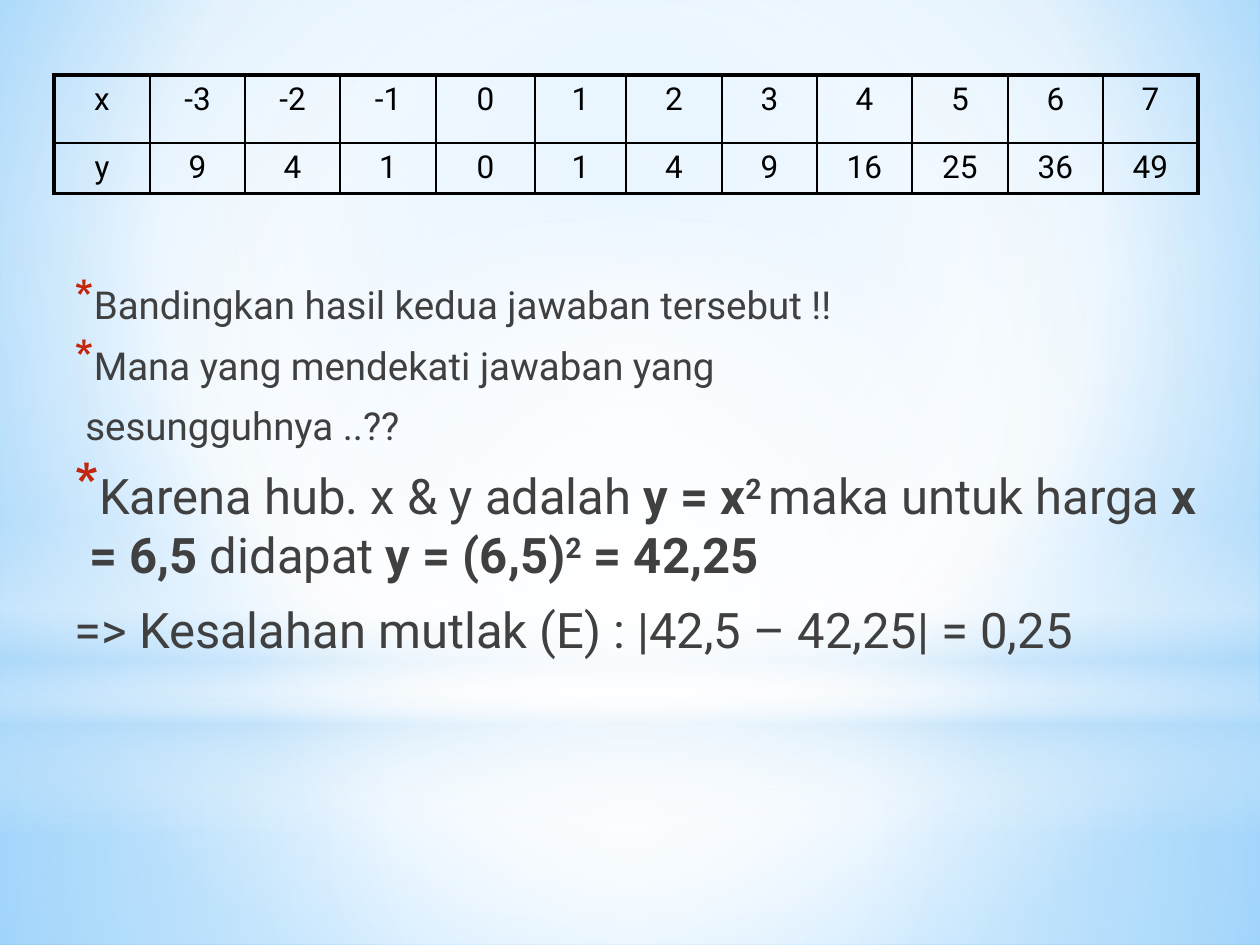
from lxml.etree import Element, SubElement
from pptx import Presentation
from pptx.dml.color import RGBColor
from pptx.enum.shapes import MSO_SHAPE
from pptx.enum.text import PP_ALIGN
from pptx.oxml.ns import qn
from pptx.util import Emu, Pt

THEME = {
    "font": "Roboto", "body": "404040", "black": "000000", "bullet": "C3260C",
    "white": "FFFFFF", "haze": "B4DCFA", "sky": "9ED5FF", "deep": "5BB9FF",
    "small": 22, "large": 28, "cell": 18, "thin": 1, "thick": 2.25,
}
SLIDE = (1260, 945)
CENTRE = (50, 50, 50, 50)
BACKDROP = {"stops": [(0, "sky", 100), (60, "white", 100), (100, "deep", 100)],
            "focus": (20, 10, 20, 60)}
LAYERS = [
    {"shape": MSO_SHAPE.RECTANGLE, "box": (0, 703, 1260, 242), "focus": CENTRE,
     "stops": [(0, "white", 91), (37, "white", 76), (100, "haze", 79)]},
    {"shape": MSO_SHAPE.RECTANGLE, "box": (0, 0, 1260, 703), "focus": CENTRE,
     "stops": [(0, "white", 89), (48, "white", 62), (100, "haze", 79)]},
    {"shape": MSO_SHAPE.RECTANGLE, "box": (0, 519, 1260, 315), "focus": None,
     "stops": [(0, "white", 0), (29, "white", 30), (45, "haze", 40),
               (55, "white", 26), (65, "haze", 60), (100, "white", 0)]},
    {"shape": MSO_SHAPE.OVAL, "box": (0, 220, 1260, 703), "focus": CENTRE,
     "stops": [(0, "white", 100), (56, "white", 0)]},
]

X_VALUES = range(-3, 8)
TABLE_ROWS = [["x", *X_VALUES], ["y", *(x * x for x in X_VALUES)]]
TABLE_AT = (54, 75)
COLUMN_WIDTHS = [96, 95, 95, 96, 99, 91, 96, 95, 95, 96, 95, 95]
ROW_HEIGHTS = [68, 50]

BODY_BOX = (54, 275, 1166, 514)
MARGIN, HANGING, CONTINUED = 23, -15, -4
PARAGRAPHS = [
    ("small", True, HANGING, [("Bandingkan hasil kedua jawaban tersebut !!", "")]),
    ("small", True, HANGING, [("Mana yang mendekati jawaban yang", "")]),
    ("small", False, CONTINUED, [("sesungguhnya ..??", "")]),
    ("large", True, HANGING, [
        ("Karena hub. x & y adalah ", ""), ("y = x", "bold"), ("2 ", "bold super"),
        ("maka untuk harga ", ""), ("x = 6,5 ", "bold"), ("didapat ", ""),
        ("y = (6,5)", "bold"), ("2", "bold super"), (" = 42,25", "bold")]),
    ("large", False, HANGING,
     [("=> Kesalahan mutlak (E) : |42,5 – 42,25| = 0,25", "")]),
]
SPACE_BEFORE = {"small": 5.2, "large": 6.6}


def px(value):
    return Emu(round(value * 914400 / 126))


def apply(target, values):
    for name, value in values.items():
        setattr(target, name, value)


def style(font, size, color, bold=False):
    apply(font, {"name": THEME["font"], "size": Pt(THEME[size]), "bold": bold})
    font.color.rgb = RGBColor.from_string(THEME[color])


def fill_gradient(fill, owner, stops, focus):
    fill.solid()
    solid = owner.find(".//" + qn("a:solidFill"))
    gradient = Element(qn("a:gradFill"), rotWithShape="1")
    stop_list = SubElement(gradient, qn("a:gsLst"))
    for position, color, opacity in stops:
        stop = SubElement(stop_list, qn("a:gs"), pos=str(position * 1000))
        tone = SubElement(stop, qn("a:srgbClr"), val=THEME[color])
        if opacity < 100:
            SubElement(tone, qn("a:alpha"), val=str(opacity * 1000))
    if focus:
        route = SubElement(gradient, qn("a:path"), {"path": "circle"})
        sides = {side: str(share * 1000) for side, share in zip("ltrb", focus)}
        SubElement(route, qn("a:fillToRect"), sides)
    else:
        SubElement(gradient, qn("a:lin"), ang=str(90 * 60000), scaled="0")
    solid.getparent().replace(solid, gradient)


def add_layer(page, layer):
    shape = page.shapes.add_shape(layer["shape"], *map(px, layer["box"]))
    shape.shadow.inherit = False
    shape.line.fill.background()
    fill_gradient(shape.fill, shape._element, layer["stops"], layer["focus"])


def set_borders(cell, widths):
    properties = cell._tc.get_or_add_tcPr()
    for side, width in zip("LRTB", widths):
        line = SubElement(properties, qn("a:ln" + side), w=str(Pt(THEME[width])))
        paint = SubElement(line, qn("a:solidFill"))
        SubElement(paint, qn("a:srgbClr"), val=THEME["black"])


def add_values(page):
    last_row, last_column = len(TABLE_ROWS) - 1, len(COLUMN_WIDTHS) - 1
    size = (sum(COLUMN_WIDTHS), sum(ROW_HEIGHTS))
    table = page.shapes.add_table(last_row + 1, last_column + 1,
                                  *map(px, TABLE_AT + size)).table
    apply(table, {"first_row": False, "horz_banding": False})
    for column, width in zip(table.columns, COLUMN_WIDTHS):
        column.width = px(width)
    for r, values in enumerate(TABLE_ROWS):
        table.rows[r].height = px(ROW_HEIGHTS[r])
        for c, value in enumerate(values):
            cell = table.cell(r, c)
            outer = (c == 0, c == last_column, r == 0, r == last_row)
            set_borders(cell, ["thick" if edge else "thin" for edge in outer])
            cell.fill.background()
            para = cell.text_frame.paragraphs[0]
            para.alignment = PP_ALIGN.CENTER
            span = para.add_run()
            span.text = str(value)
            style(span.font, "cell", "black")


def set_bullet(para, bulleted, indent):
    properties = para._p.get_or_add_pPr()
    properties.set("marL", str(px(MARGIN)))
    properties.set("indent", str(px(indent)))
    if bulleted:
        tone = SubElement(properties, qn("a:buClr"))
        SubElement(tone, qn("a:srgbClr"), val=THEME["bullet"])
        SubElement(properties, qn("a:buSzPct"), val="130000")
        SubElement(properties, qn("a:buChar"), char="*")
    else:
        SubElement(properties, qn("a:buNone"))


def add_body(page):
    frame = page.shapes.add_textbox(*map(px, BODY_BOX)).text_frame
    frame.word_wrap = True
    for number, (size, bulleted, indent, spans) in enumerate(PARAGRAPHS):
        para = frame.add_paragraph() if number else frame.paragraphs[0]
        set_bullet(para, bulleted, indent)
        before = SPACE_BEFORE[size] if number else 0
        apply(para, {"space_before": Pt(before), "space_after": Pt(3)})
        for text, marks in spans:
            span = para.add_run()
            span.text = text
            style(span.font, size, "body", "bold" in marks)
            if "super" in marks:
                span._r.get_or_add_rPr().set("baseline", "30000")


def main():
    deck = Presentation()
    deck.slide_width, deck.slide_height = map(px, SLIDE)
    page = deck.slides.add_slide(deck.slide_layouts[6])
    fill_gradient(page.background.fill, page._element, **BACKDROP)
    for layer in LAYERS:
        add_layer(page, layer)
    add_body(page)
    add_values(page)
    deck.save("out.pptx")


if __name__ == "__main__":
    main()
